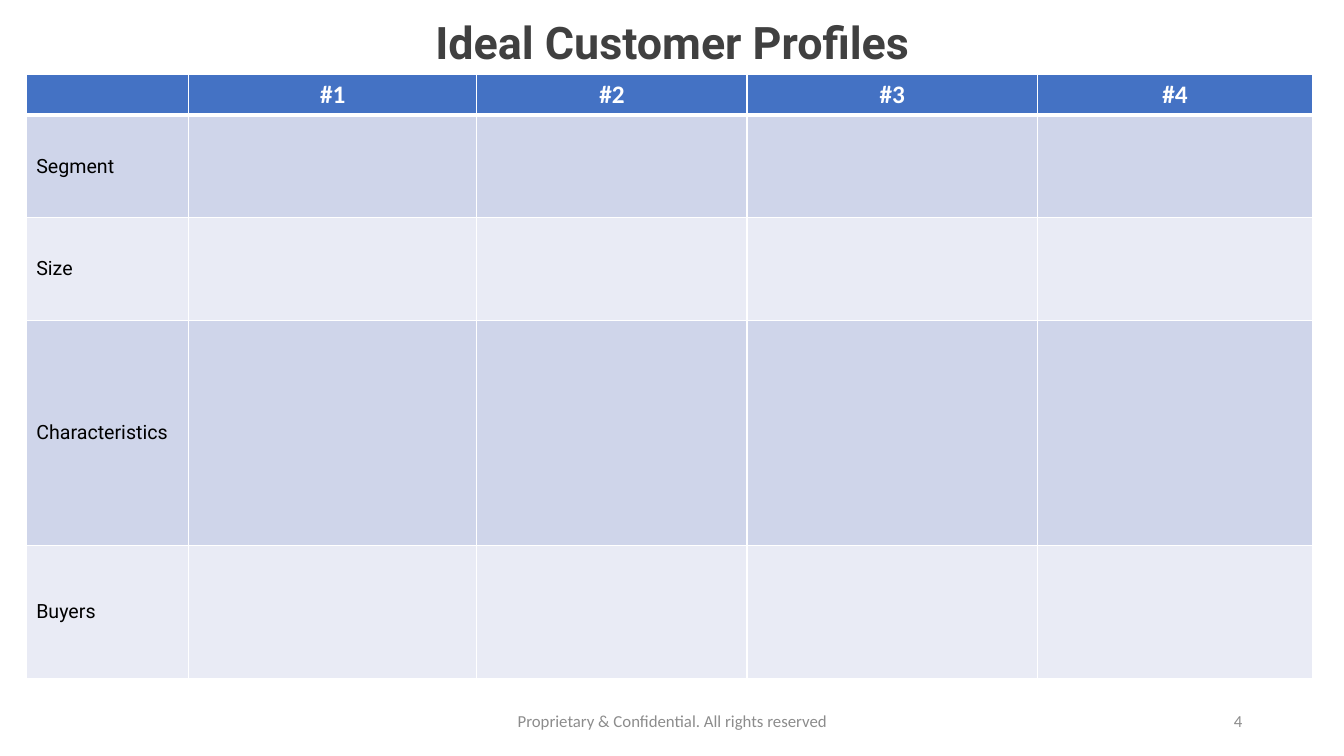
from dataclasses import dataclass

from lxml import etree
from pptx import Presentation
from pptx.dml.color import RGBColor
from pptx.enum.text import MSO_ANCHOR, PP_ALIGN
from pptx.oxml.ns import qn
from pptx.util import Inches, Pt


@dataclass(frozen=True)
class Theme:
    heading_font: str = "Roboto"
    body_font: str = "Calibri"
    title_color: str = "404040"
    footer_color: str = "8C8C8C"
    header_fill: str = "4472C4"
    dark_band: str = "CFD5EA"
    light_band: str = "E9EBF5"
    white: str = "FFFFFF"
    black: str = "000000"
    title_size: int = 32
    header_size: int = 18
    label_size: int = 14
    footer_size: int = 12


theme = Theme()


def write(frame, text, font, size, color, align, bold=False):
    para = frame.paragraphs[0]
    para.alignment = align
    span = para.add_run()
    span.text = text
    span.font.name = font
    span.font.size = Pt(size)
    span.font.bold = bold
    span.font.color.rgb = RGBColor.from_string(color)


def add_border(cell, side, width):
    properties = cell._tc.get_or_add_tcPr()
    line = etree.SubElement(properties, qn(f"a:{side}"), w=str(Pt(width)))
    fill = etree.SubElement(line, qn("a:solidFill"))
    etree.SubElement(fill, qn("a:srgbClr"), val=theme.white)


deck = Presentation()
deck.slide_width, deck.slide_height = Inches(13.33), Inches(7.5)
page = deck.slides.add_slide(deck.slide_layouts[5])

# Title
title = page.shapes.title
title.left, title.top = Inches(0.92), Inches(-0.28)
title.width, title.height = Inches(11.5), Inches(1.45)
title.text_frame.vertical_anchor = MSO_ANCHOR.MIDDLE
title.text_frame.paragraphs[0].line_spacing = 0.9
write(title.text_frame, "Ideal Customer Profiles", theme.heading_font,
      theme.title_size, theme.title_color, PP_ALIGN.CENTER, bold=True)

# Footer and page number
footers = [
    ("Proprietary & Confidential. All rights reserved", 4.42, 4.5, PP_ALIGN.CENTER),
    ("4", 9.42, 3, PP_ALIGN.RIGHT),
]
for text, left, width, align in footers:
    box = page.shapes.add_textbox(Inches(left), Inches(6.95), Inches(width), Inches(0.4))
    box.text_frame.word_wrap = True
    box.text_frame.vertical_anchor = MSO_ANCHOR.MIDDLE
    write(box.text_frame, text, theme.body_font, theme.footer_size,
          theme.footer_color, align)

# Profile table
labels = ["", "Segment", "Size", "Characteristics", "Buyers"]
column_widths = [1.61, 2.86, 2.68, 2.88, 2.73]
row_heights = [0.4, 1.02, 1.02, 2.23, 1.32]
table = page.shapes.add_table(
    len(row_heights), len(column_widths), Inches(0.26), Inches(0.74),
    Inches(sum(column_widths)), Inches(sum(row_heights))).table
for column, width in zip(table.columns, column_widths):
    column.width = Inches(width)

for row_index, (row, height) in enumerate(zip(table.rows, row_heights)):
    row.height = Inches(height)
    if row_index == 0:
        band = theme.header_fill
    else:
        band = theme.dark_band if row_index % 2 else theme.light_band
    for column_index, cell in enumerate(row.cells):
        # White grid, heavier under the header
        add_border(cell, "lnL", 1)
        add_border(cell, "lnR", 1)
        add_border(cell, "lnT", 3 if row_index == 1 else 1)
        add_border(cell, "lnB", 3 if row_index == 0 else 1)
        cell.fill.solid()
        cell.fill.fore_color.rgb = RGBColor.from_string(band)
        # Profile numbers across the top, labels down the side
        if row_index == 0 and column_index > 0:
            write(cell.text_frame, f"#{column_index}", theme.body_font,
                  theme.header_size, theme.white, PP_ALIGN.CENTER, bold=True)
        elif row_index > 0 and column_index == 0:
            cell.vertical_anchor = MSO_ANCHOR.MIDDLE
            write(cell.text_frame, labels[row_index], theme.heading_font,
                  theme.label_size, theme.black, PP_ALIGN.LEFT)

deck.save("out.pptx")
